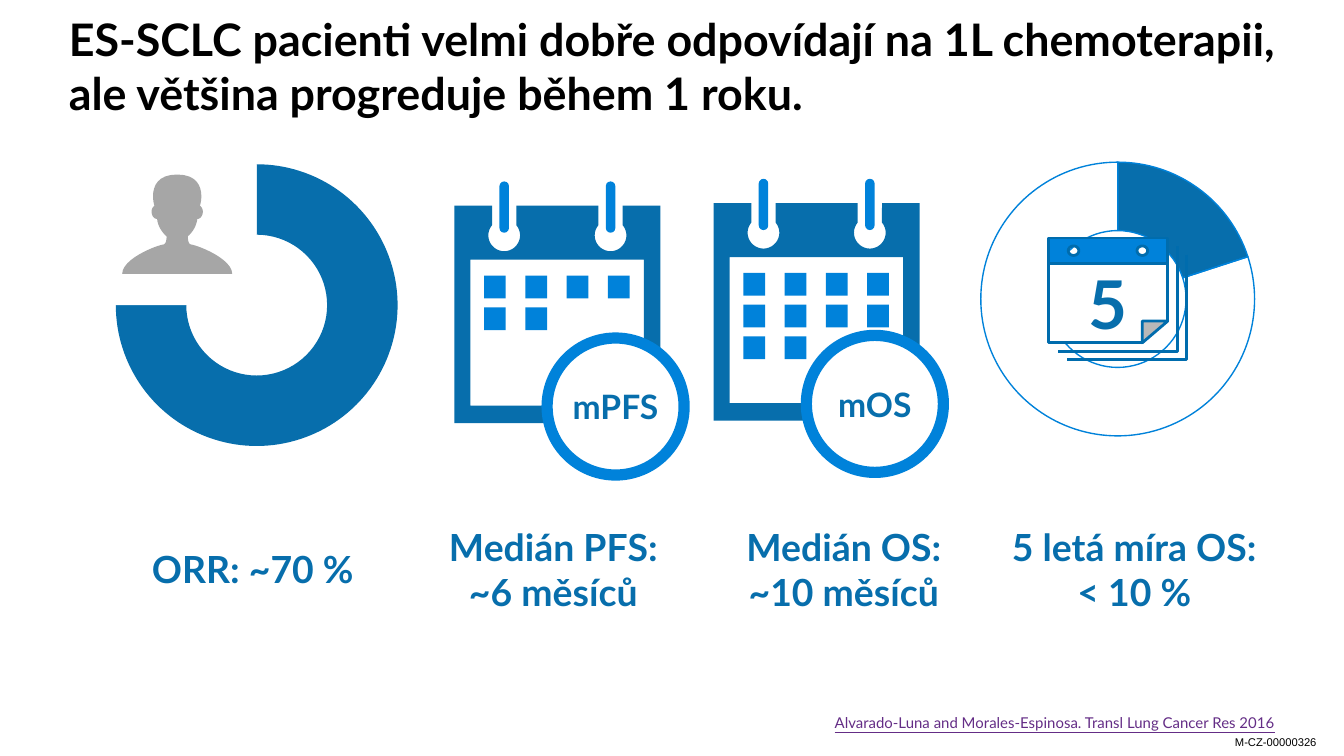
import math

import lxml.etree
import pptx
import pptx.chart.data
import pptx.dml.color
import pptx.enum.chart
import pptx.enum.shapes
import pptx.enum.text
import pptx.oxml.ns
import pptx.util

Cm, Pt = pptx.util.Cm, pptx.util.Pt
Kind = pptx.enum.shapes.MSO_SHAPE
Align, Anchor = pptx.enum.text.PP_ALIGN, pptx.enum.text.MSO_ANCHOR
qn = pptx.oxml.ns.qn
BLUE, SKY, EDGE, WHITE, BLACK = "076EAC", "0082DA", "006CAD", "FFFFFF", "000000"


def paint(fill, tone):
    """Make a fill solid in a hex colour, or empty for None."""
    if tone is None:
        fill.background()
    else:
        fill.solid()
        fill.fore_color.rgb = pptx.dml.color.RGBColor.from_string(tone)


def dress(shape, tone, edge=None, width=0):
    """Set fill and line, and drop the shadow."""
    shape.shadow.inherit = False
    paint(shape.fill, tone)
    paint(shape.line.fill, edge)
    if edge:
        shape.line.width = Pt(width)


deck = pptx.Presentation()
deck.slide_width, deck.slide_height = Cm(25.4), Cm(14.29)
slide = deck.slides.add_slide(deck.slide_layouts[5])
shapes = slide.shapes
texts = []  # shape, wording, frame values, alignment, font values, colour

# Title
title = shapes.title
for key, size in {"left": 1.3, "top": 0.53, "width": 22.81, "height": 1.73}.items():
    setattr(title, key, Cm(size))
flush = {"margin_left": 0, "margin_right": 0, "margin_top": 0, "margin_bottom": 0}
low = {**flush, "word_wrap": True, "vertical_anchor": Anchor.BOTTOM}
mid = {**flush, "word_wrap": True, "vertical_anchor": Anchor.MIDDLE}
bold = {"name": "Lato", "bold": True}
texts.append((title, "ES-SCLC pacienti velmi dobře odpovídají na 1L chemoterapii, "
              "ale většina progreduje během 1 roku.", low, Align.LEFT,
              {**bold, "size": Pt(24)}, BLACK))

# Doughnut charts: box, categories, values, colours, line, hole, plot layout
rings = [
    ((1.37, 2.29, 6.83, 6.96), ["1", "2"], (75, 25), (BLUE, WHITE), None, 50,
     (0.12, 0, 0.78, 1)),
    ((17.53, 2.69, 7.19, 5.87), ["1", "2", "3", "4"], (20, 80, None, None),
     (BLUE, None), SKY, 75, (0.14, 0.06, 0.72, 0.89)),
]
for box, cats, vals, tones, edge, hole, place in rings:
    data = pptx.chart.data.CategoryChartData()
    data.categories = cats
    data.add_series("Series 1", vals)
    chart = shapes.add_chart(pptx.enum.chart.XL_CHART_TYPE.DOUGHNUT,
                             *map(Cm, box), data).chart
    chart.has_legend = chart.has_title = False
    chart.font.name, chart.font.size = "Arial", Pt(10)
    paint(chart.font.fill, BLACK)
    for idx, tone in enumerate(tones):
        part = chart.plots[0].series[0].points[idx].format
        paint(part.fill, tone)
        paint(part.line.fill, edge)
        if edge:
            part.line.width = Pt(0.75)
    root = chart.element
    root.find(".//" + qn("c:holeSize")).set("val", str(hole))
    area = root.find(".//" + qn("c:plotArea"))
    for old in area.findall(qn("c:layout")):
        area.remove(old)
    layout = lxml.etree.Element(qn("c:layout"))
    area.insert(0, layout)
    manual = lxml.etree.SubElement(layout, qn("c:manualLayout"))
    values = dict(zip("xywh", place))
    for tag, val in {"layoutTarget": "inner", "xMode": "edge", "yMode": "edge",
                     **values}.items():
        lxml.etree.SubElement(manual, qn("c:" + tag)).set("val", str(val))

# Person: right half as Bezier curves around the middle, then mirrored
curves = [
    [(0, 3.3), (0.56, 3.3), (0.46, 3.81), (0.43, 3.89)],
    [(0.43, 3.89), (0.53, 3.96), (0.48, 4.14), (0.38, 4.14)],
    [(0.38, 4.14), (0.36, 4.34), (0.2, 4.47), (0.2, 4.47)],
    [(0.2, 4.47), (0.2, 4.47), (0.2, 4.6), (0.25, 4.62)],
    [(0.25, 4.62), (0.43, 4.65), (1.04, 4.9), (1.04, 5.18)],
]
half = []
for knots in curves:
    for step in range(13):
        t = step / 12
        mix = ((1 - t) ** 3, 3 * t * (1 - t) ** 2, 3 * t * t * (1 - t), t ** 3)
        half.append([sum(m * k[axis] for m, k in zip(mix, knots)) for axis in (0, 1)])
person = [(3.35 + x, y) for x, y in half] + [(3.35 - x, y) for x, y in half[::-1]]

# Month calendars: left, top, days per row, badge
months = [(8.59, 3.89, (4, 2), "mPFS"), (13.49, 3.84, (4, 4, 2), "mOS")]
pins = (0.94, 2.95)
body = [(0, 0)]
for mid_x in pins:
    body.append((mid_x - 0.23, 0))
    for deg in range(220, -41, -10):
        turn = math.radians(deg)
        body.append((mid_x + 0.3 * math.cos(turn), 0.56 + 0.3 * math.sin(turn)))
    body.append((mid_x + 0.23, 0))
body += [(3.89, 0), (3.89, 4.11), (0, 4.11)]
pane = [(0.3, 1.02), (3.58, 1.02), (3.58, 3.78), (0.3, 3.78)]

# Day calendar
left, right, top, band, fold, base, nook = 19.81, 22.07, 4.5, 4.98, 6.07, 6.48, 21.59
face = [(left, band), (right, band), (right, fold), (nook, fold), (nook, base),
        (left, base)]
strip = [[(left, top), (right, top), (right, band), (left, band)]]
for hub in (20.29, nook):
    strip.append([(hub + 0.1 * math.cos(math.radians(deg)),
                   4.74 + 0.09 * math.sin(math.radians(deg)))
                  for deg in range(0, 360, 15)])

# Outlines: contours, closed, fill, line
outlines = {"person": ([person], True, "A6A6A6", None)}
for x, y, rows, name in months:
    both = [[(x + dx, y + dy) for dx, dy in ring] for ring in (body, pane)]
    outlines[name] = (both, True, BLUE, None)
outlines["face"] = ([face], True, WHITE, EDGE)
for num in (1, 2):
    dx, dy = 0.18 * num, 0.16 * num
    page = [(right + dx, top + dy), (right + dx, base + dy), (left + dx, base + dy)]
    outlines[f"page {num}"] = ([page], False, None, EDGE)
outlines["strip"] = (strip, True, SKY, EDGE)
outlines["fold"] = ([[(right, fold), (nook, base), (nook, fold)]], True, "B8B8B8", EDGE)
drawn = {}
for name, (loops, closed, tone, edge) in outlines.items():
    pen = None
    for ring in loops:
        dots = [(Cm(x), Cm(y)) for x, y in ring]
        if pen is None:
            pen = shapes.build_freeform(*dots[0], scale=1.0)
        else:
            pen.move_to(*dots[0])
        pen.add_line_segments(dots[1:], close=closed)
    drawn[name] = pen.convert_to_shape()
    dress(drawn[name], tone, edge, 1.5)
texts.append((drawn["face"], "5", mid, Align.CENTER, {**bold, "size": Pt(36)}, BLUE))

# Pins, days and badges
for x, y, rows, name in months:
    for mid_x in pins:
        pin = shapes.add_shape(Kind.ROUNDED_RECTANGLE, Cm(x + mid_x - 0.09),
                               Cm(y - 0.46), Cm(0.18), Cm(0.97))
        pin.adjustments[0] = 0.5
        dress(pin, SKY)
    for row, count in enumerate(rows):
        for col in range(count):
            day = shapes.add_shape(Kind.RECTANGLE, Cm(x + 0.56 + 0.78 * col),
                                   Cm(y + 1.32 + 0.6 * row), Cm(0.41), Cm(0.43))
            dress(day, SKY)
    badge = shapes.add_shape(Kind.OVAL, Cm(x + 1.75), Cm(y + 2.5), Cm(2.59), Cm(2.59))
    dress(badge, WHITE, SKY, 6)
    texts.append((badge, name, mid, Align.CENTER, {**bold, "size": Pt(18)}, BLUE))

# Captions, citation and code
for mid_x, words in [(4.78, "ORR: ~70 %"), (10.46, "Medián PFS:\v~6 měsíců"),
                     (15.95, "Medián OS:\v~10 měsíců"),
                     (21.44, "5 letá míra OS:\v< 10 %")]:
    box = shapes.add_textbox(Cm(mid_x - 0.66), Cm(9.86), Cm(1.32), Cm(1.78))
    texts.append((box, words, {"word_wrap": False, "vertical_anchor": Anchor.MIDDLE},
                  Align.CENTER, {**bold, "size": Pt(20)}, BLUE))
box = shapes.add_textbox(Cm(6.5), Cm(13.21), Cm(17.6), Cm(0.61))
texts.append((box, "Alvarado-Luna and Morales-Espinosa. Transl Lung Cancer Res 2016",
              low, Align.RIGHT, {"name": "Lato", "size": Pt(8), "underline": True},
              "642D86"))
box = shapes.add_textbox(Cm(23.09), Cm(13.77), Cm(2.08), Cm(0.51))
texts.append((box, "M-CZ-00000326", {"word_wrap": False}, Align.LEFT,
              {"name": "Arial", "size": Pt(6)}, BLACK))

for shape, words, layout, align, look, tone in texts:
    frame = shape.text_frame
    frame.auto_size = pptx.enum.text.MSO_AUTO_SIZE.NONE
    for key, val in layout.items():
        setattr(frame, key, val)
    para = frame.paragraphs[0]
    para.text, para.alignment = words, align
    for run in para.runs:
        for key, val in look.items():
            setattr(run.font, key, val)
        paint(run.font.fill, tone)

deck.save("out.pptx")
